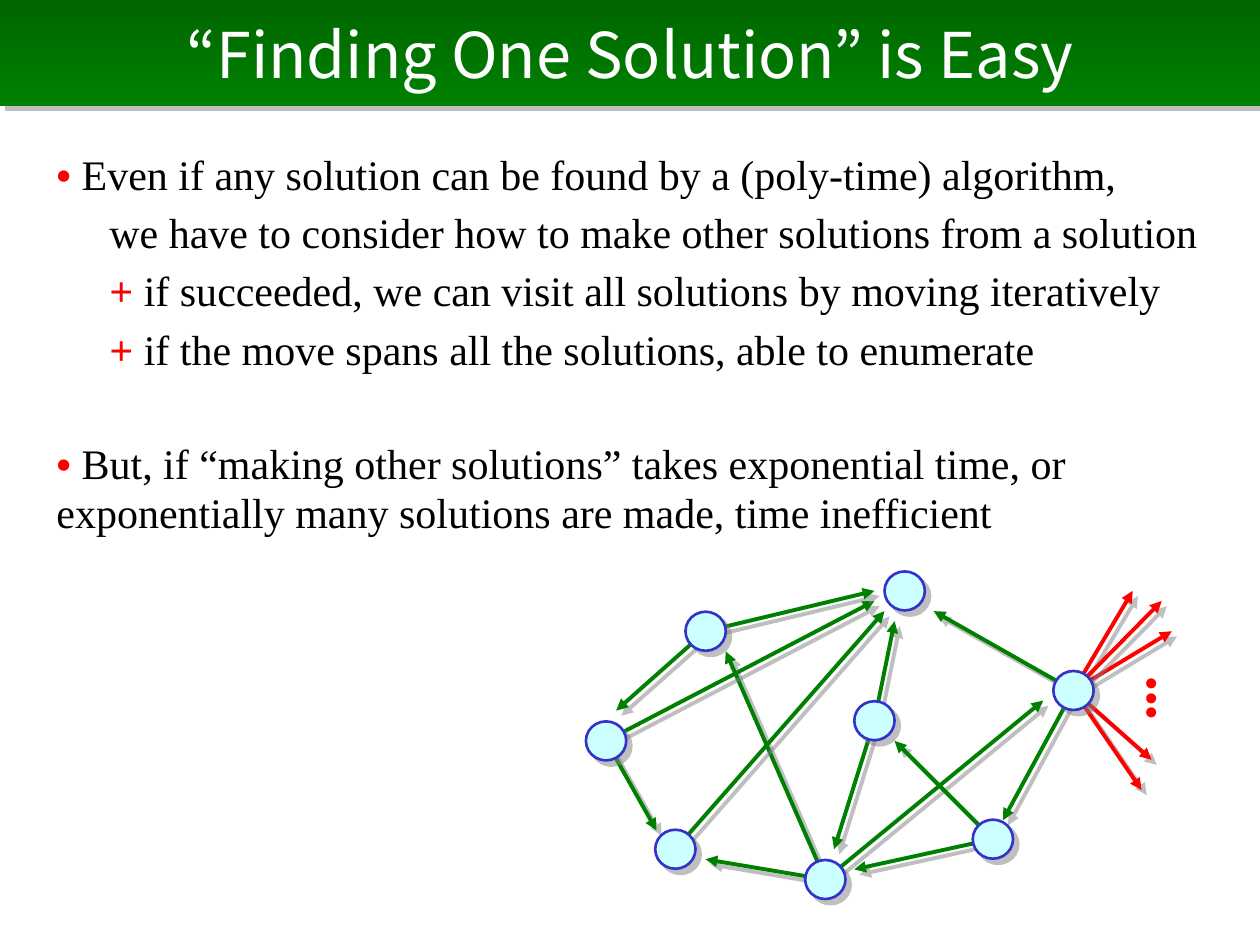
"""Build a slide on moving between solutions, with a graph of moves."""
from typing import NamedTuple

from lxml.etree import SubElement
from pptx import Presentation as Deck
from pptx.dml.color import RGBColor as Rgb
from pptx.enum.shapes import MSO_CONNECTOR as Conn, MSO_SHAPE as Form
from pptx.enum.text import MSO_ANCHOR as Anchor, PP_ALIGN as Align
from pptx.oxml.ns import qn
from pptx.util import Inches, Pt

HUES = {"dark": "006600", "green": "008000", "white": "FFFFFF", "black": "000000",
        "red": "FF0000", "node": "CCFFFF", "rim": "3333CC", "shade": "808080"}
SERIF = "Times New Roman"
SANS = "Noto Sans CJK JP"


class Point(NamedTuple):
    x: float
    y: float


class Line(NamedTuple):
    mark: str
    text: str
    indent: float = 0
    gap: float = 5


class Move(NamedTuple):
    node: str
    tip: Point
    hue: str = "green"


LINES = [
    Line("• ", "Even if any solution can be found by a (poly-time) algorithm,"),
    Line("", "we have to consider how to make other solutions from a solution", 0.42),
    Line("+ ", "if succeeded, we can visit all solutions by moving iteratively", 0.42),
    Line("+ ", "if the move spans all the solutions, able to enumerate", 0.42),
    Line("• ", "But, if “making other solutions” takes exponential time, or "
         "exponentially many solutions are made, time inefficient", gap=37),
]

NODES = {
    "west": Point(4.81, 5.88), "low": Point(5.36, 6.74), "north": Point(5.6, 5.01),
    "mid": Point(6.94, 5.72), "top": Point(7.18, 4.69), "south": Point(7.88, 6.66),
    "base": Point(6.55, 6.98), "east": Point(8.52, 5.48),
}

MOVES = [
    Move("east", Point(7.41, 4.85)), Move("east", Point(7.96, 6.51)),
    Move("south", Point(6.78, 6.9)), Move("base", Point(5.76, 5.17)),
    Move("base", Point(8.28, 5.56)), Move("low", Point(7.02, 4.85)),
    Move("west", Point(6.94, 4.77)), Move("north", Point(6.94, 4.69)),
    Move("base", Point(5.6, 6.82)), Move("south", Point(7.1, 5.88)),
    Move("mid", Point(7.1, 4.93)), Move("mid", Point(6.62, 6.74)),
    Move("west", Point(5.21, 6.59)), Move("north", Point(4.89, 5.64)),
]

EXITS = [Move("east", Point(x, y), "red") for x, y in
         [(8.99, 4.69), (9.3, 5.01), (9.22, 4.77), (9.14, 6.03), (9.06, 6.27)]]


def tint(name: str) -> Rgb:
    """Give the colour of a name."""
    return Rgb.from_string(HUES[name])


def shade(shape) -> None:
    """Cast a hard grey shadow to the lower right."""
    effect = SubElement(shape._element.spPr, qn("a:effectLst"))
    outer = SubElement(effect, qn("a:outerShdw"), blurRad="0",
                       dist=str(Pt(4.2)), dir="2700000", algn="ctr", rotWithShape="0")
    color = SubElement(outer, qn("a:srgbClr"), val=HUES["shade"])
    SubElement(color, qn("a:alpha"), val="50000")


def style(run, face: str, size: float, hue: str, bold: bool = False) -> None:
    """Set the font of a run."""
    font = run.font
    font.name, font.size, font.bold = face, Pt(size), bold
    font.color.rgb = tint(hue)


def draw_title(slide) -> None:
    """Turn the title into a green banner."""
    title = slide.shapes.title
    title.left, title.top = Inches(0), Inches(0)
    title.width, title.height = Inches(10), Inches(0.84)
    title.fill.gradient()
    title.fill.gradient_angle = 270
    for stop, hue, place in zip(title.fill.gradient_stops, ("dark", "green"), (0, 1)):
        stop.color.rgb, stop.position = tint(hue), place
    title.line.fill.background()
    shade(title)
    frame = title.text_frame
    frame.text = "“Finding One Solution” is Easy"
    frame.vertical_anchor = Anchor.MIDDLE
    para = frame.paragraphs[0]
    para.alignment = Align.CENTER
    style(para.runs[0], SANS, 36, "white")


def draw_text(slide) -> None:
    """Write the points, each with a red mark."""
    box = slide.shapes.add_textbox(Inches(0.35), Inches(1.15), Inches(9.37), Inches(3.62))
    frame = box.text_frame
    frame.word_wrap = True
    for index, line in enumerate(LINES):
        para = frame.add_paragraph() if index else frame.paragraphs[0]
        para.line_spacing, para.space_before = 0.98, Pt(line.gap)
        para._p.get_or_add_pPr().set("marL", str(Inches(line.indent)))
        if line.mark:
            mark = para.add_run()
            mark.text = line.mark
            style(mark, SERIF, 24, "red", True)
        body = para.add_run()
        body.text = line.text
        style(body, SERIF, 24, "black")


def draw_move(slide, move: Move) -> None:
    """Draw an arrow from the centre of a node."""
    start = NODES[move.node]
    arrow = slide.shapes.add_connector(
        Conn.STRAIGHT, *map(Inches, (*start, *move.tip)))
    arrow.line.color.rgb, arrow.line.width = tint(move.hue), Pt(2.25)
    SubElement(arrow.line._get_or_add_ln(), qn("a:tailEnd"), type="triangle")
    shade(arrow)


def draw_node(slide, spot: Point) -> None:
    """Draw a solution as a circle round its centre."""
    wide, high = 0.32, 0.31
    node = slide.shapes.add_shape(Form.OVAL, Inches(spot.x - wide / 2),
                                  Inches(spot.y - high / 2), Inches(wide), Inches(high))
    node.fill.solid()
    node.fill.fore_color.rgb = tint("node")
    node.line.color.rgb, node.line.width = tint("rim"), Pt(1.5)
    shade(node)


def draw_dots(slide) -> None:
    """Set upright dots between the red arrows."""
    box = slide.shapes.add_textbox(Inches(8.88), Inches(5.29), Inches(0.55), Inches(0.51))
    box.rotation = 90
    frame = box.text_frame
    frame.word_wrap = False
    frame.text = "•••"
    style(frame.paragraphs[0].runs[0], SERIF, 24, "red")


def main() -> None:
    """Build and save the slide."""
    deck = Deck()
    deck.slide_width, deck.slide_height = Inches(10), Inches(7.5)
    slide = deck.slides.add_slide(deck.slide_layouts[5])
    draw_title(slide)
    draw_text(slide)
    for move in MOVES + EXITS:
        draw_move(slide, move)
    draw_dots(slide)
    for spot in NODES.values():
        draw_node(slide, spot)
    deck.save("out.pptx")


if __name__ == "__main__":
    main()
